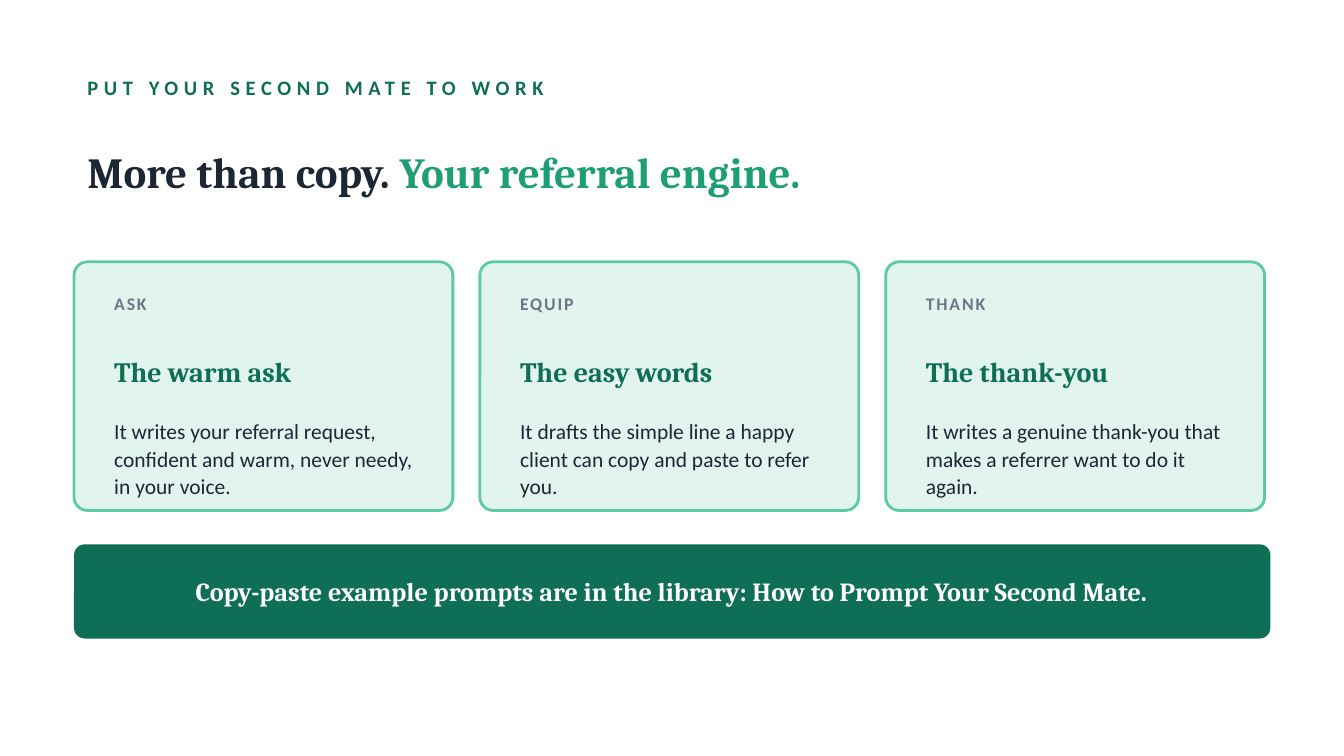
import pptx
import pptx.util
import pptx.dml.color
import pptx.enum.shapes
import pptx.enum.text

Cm = pptx.util.Cm
Pt = pptx.util.Pt
RGB = pptx.dml.color.RGBColor

WHITE = RGB(0xFF, 0xFF, 0xFF)
INK = RGB(0x1C, 0x27, 0x33)
GREY = RGB(0x6B, 0x77, 0x85)
FOREST = RGB(0x0F, 0x6E, 0x56)
GREEN = RGB(0x1D, 0x9E, 0x75)
MINT = RGB(0x5D, 0xCA, 0xA5)
PALE = RGB(0xE1, 0xF5, 0xEE)

LEFT, WIDTH = 1.4, 22.61
CARD_TOP, CARD_W, CARD_H = 4.95, 7.16, 4.7
STEP = 7.67
PAD, TEXT_W = 0.51, 6.22

CARDS = [
    ("ASK", "The warm ask",
     "It writes your referral request, confident and warm, never needy, in your voice."),
    ("EQUIP", "The easy words",
     "It drafts the simple line a happy client can copy and paste to refer you."),
    ("THANK", "The thank-you",
     "It writes a genuine thank-you that makes a referrer want to do it again."),
]


class Deck:
    STYLES = {
        "label": {"name": "Calibri", "size": Pt(11), "bold": True},
        "title": {"name": "Cambria", "size": Pt(23), "bold": True},
        "tag": {"name": "Calibri", "size": Pt(9.5), "bold": True},
        "head": {"name": "Cambria", "size": Pt(15), "bold": True},
        "body": {"name": "Calibri", "size": Pt(11.5), "bold": False},
        "note": {"name": "Cambria", "size": Pt(14), "bold": True},
    }
    TRACKS = {"label": 3, "tag": 1}

    def __init__(self, slide):
        self.slide = slide

    def text(self, x, y, w, h, style, *parts, **format):
        """Add a text box; parts are (words, colour) pairs, format is set on the paragraph."""
        box = self.slide.shapes.add_textbox(Cm(x), Cm(y), Cm(w), Cm(h))
        frame = box.text_frame
        frame.word_wrap = True
        frame.vertical_anchor = pptx.enum.text.MSO_ANCHOR.MIDDLE
        para = frame.paragraphs[0]
        for key, value in format.items():
            setattr(para, key, value)
        for words, color in parts:
            run = para.add_run()
            run.text = words
            for key, value in self.STYLES[style].items():
                setattr(run.font, key, value)
            run.font.color.rgb = color
            if style in self.TRACKS:
                run._r.get_or_add_rPr().set("spc", str(self.TRACKS[style] * 100))

    def panel(self, x, y, w, h, fill, curve, line=None):
        """Add a rounded box whose corner radius is curve times its height."""
        kind = pptx.enum.shapes.MSO_SHAPE.ROUNDED_RECTANGLE
        shape = self.slide.shapes.add_shape(kind, Cm(x), Cm(y), Cm(w), Cm(h))
        shape.adjustments[0] = curve
        shape.shadow.inherit = False
        shape.fill.solid()
        shape.fill.fore_color.rgb = fill
        if line is None:
            shape.line.fill.background()
        else:
            shape.line.color.rgb = line
            shape.line.width = Pt(1.5)

    def card(self, x, tag, head, body):
        self.panel(x, CARD_TOP, CARD_W, CARD_H, PALE, 0.054, MINT)
        x += PAD
        self.text(x, 5.36, TEXT_W, 0.76, "tag", (tag, GREY))
        self.text(x, 6.12, TEXT_W, 1.78, "head", (head, FOREST))
        self.text(x, 7.95, TEXT_W, 1.4, "body", (body, INK), line_spacing=1.08)


def main():
    show = pptx.Presentation()
    show.slide_width, show.slide_height = Cm(25.4), Cm(14.29)
    deck = Deck(show.slides.add_slide(show.slide_layouts[6]))

    deck.text(LEFT, 1.27, WIDTH, 0.76, "label", ("PUT YOUR SECOND MATE TO WORK", FOREST))
    deck.text(LEFT, 2.16, WIDTH, 2.16, "title",
              ("More than copy. ", INK), ("Your referral engine.", GREEN))
    for i, card in enumerate(CARDS):
        deck.card(LEFT + i * STEP, *card)

    deck.panel(LEFT, 10.29, WIDTH, 1.78, FOREST, 0.114)
    deck.text(2.03, 10.29, 21.34, 1.78, "note",
              ("Copy-paste example prompts are in the library: "
               "How to Prompt Your Second Mate.", WHITE),
              alignment=pptx.enum.text.PP_ALIGN.CENTER)
    show.save("out.pptx")


if __name__ == "__main__":
    main()
